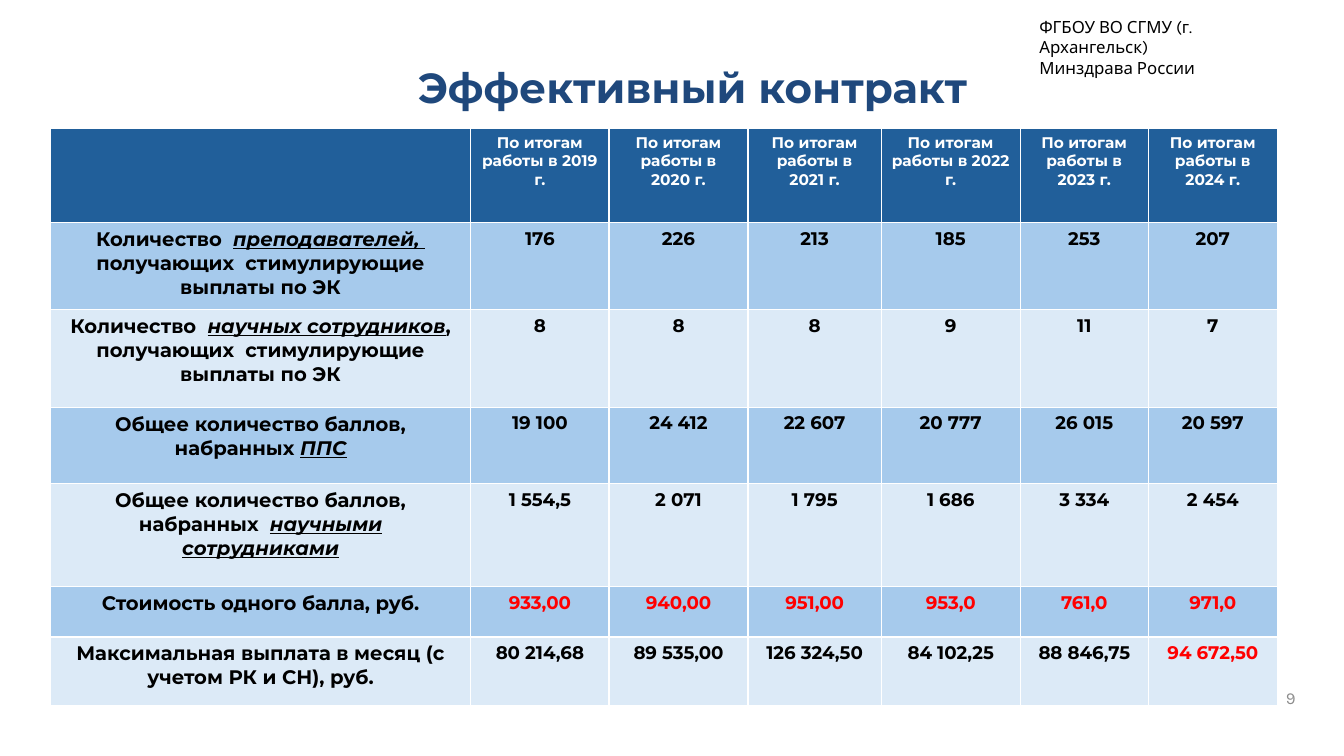
from pptx import Presentation
from pptx.dml.color import RGBColor
from pptx.enum import text
from pptx.util import Inches, Pt

HEADER_FILL, DARK_BAND, LIGHT_BAND = "215F9A", "A6CAEC", "DCEAF7"
BLACK, WHITE, RED, NAVY, GREY = "000000", "FFFFFF", "FF0000", "1F487C", "8C8C8C"
YEARS = range(2019, 2025)
COLUMN_WIDTHS = [4.17, 1.37, 1.38, 1.32, 1.38, 1.27, 1.28]
ROW_HEIGHTS = [0.94, 0.86, 0.97, 0.76, 1.02, 0.5, 0.68]

# Each row: label parts (every second one is emphasised), values, number of red values at the end
INDICATORS = [
    (["Количество  ", "преподавателей,  ", "получающих  стимулирующие выплаты по ЭК"],
     ["176", "226", "213", "185", "253", "207"], 0),
    (["Количество  ", "научных сотрудников", ", получающих  стимулирующие выплаты по ЭК"],
     ["8", "8", "8", "9", "11", "7"], 0),
    (["Общее количество баллов, набранных ", "ППС"],
     ["19 100", "24 412", "22 607", "20 777", "26 015", "20 597"], 0),
    (["Общее количество баллов, набранных  ", "научными сотрудниками"],
     ["1 554,5", "2 071", "1 795", "1 686", "3 334", "2 454"], 0),
    (["Стоимость одного балла, руб."],
     ["933,00", "940,00", "951,00", "953,0", "761,0", "971,0"], 6),
    (["Максимальная выплата в месяц (с учетом РК и СН), руб."],
     ["80 214,68", "89 535,00", "126 324,50", "84 102,25", "88 846,75", "94 672,50"], 1),
]


def color(value):
    return RGBColor.from_string(value)


def add_run(paragraph, words, size, hue, font="Montserrat", bold=True, emphasis=False):
    run = paragraph.add_run()
    run.text = words
    run.font.name, run.font.size, run.font.bold = font, Pt(size), bold
    run.font.italic = run.font.underline = emphasis
    run.font.color.rgb = color(hue)


def add_text_frame(slide, box, inset=True):
    frame = slide.shapes.add_textbox(*map(Inches, box)).text_frame
    frame.word_wrap = True
    if not inset:
        frame.margin_left = frame.margin_top = frame.margin_right = frame.margin_bottom = 0
    return frame


def add_organisation(slide, box):
    frame = add_text_frame(slide, box)
    add_run(frame.paragraphs[0], "ФГБОУ ВО СГМУ (г. Архангельск)", 12, BLACK, "Karla", False)
    add_run(frame.add_paragraph(), "Минздрава России", 12, BLACK, "Karla", False)


def add_title(slide, box):
    paragraph = add_text_frame(slide, box, inset=False).paragraphs[0]
    paragraph.alignment = text.PP_ALIGN.CENTER
    paragraph.line_spacing = 0.9
    add_run(paragraph, "Эффективный контракт", 30, NAVY)


def add_page_number(slide, box):
    paragraph = add_text_frame(slide, box, inset=False).paragraphs[0]
    paragraph.alignment = text.PP_ALIGN.RIGHT
    add_run(paragraph, "9", 12, GREY, "Karla", False)


def fill_cell(cell, fill, parts, size, hue):
    """Fill the cell and write its parts, emphasising every second one."""
    cell.fill.solid()
    cell.fill.fore_color.rgb = color(fill)
    paragraph = cell.text_frame.paragraphs[0]
    paragraph.alignment = text.PP_ALIGN.CENTER
    for index, part in enumerate(parts):
        add_run(paragraph, part, size, hue, emphasis=index % 2 == 1)


def add_indicator_table(slide, left, top):
    box = [left, top, sum(COLUMN_WIDTHS), sum(ROW_HEIGHTS)]
    table = slide.shapes.add_table(
        len(ROW_HEIGHTS), len(COLUMN_WIDTHS), *map(Inches, box)).table
    for column, width in zip(table.columns, COLUMN_WIDTHS):
        column.width = Inches(width)
    for row, height in zip(table.rows, ROW_HEIGHTS):
        row.height = Inches(height)

    fill_cell(table.cell(0, 0), HEADER_FILL, [], 11, WHITE)
    for column, year in enumerate(YEARS, 1):
        fill_cell(table.cell(0, column), HEADER_FILL,
                  [f"По итогам работы в {year} г."], 11, WHITE)

    for row, (label, values, red_count) in enumerate(INDICATORS, 1):
        band = DARK_BAND if row % 2 else LIGHT_BAND
        fill_cell(table.cell(row, 0), band, label, 14, BLACK)
        for column, value in enumerate(values, 1):
            hue = RED if column > len(values) - red_count else BLACK
            fill_cell(table.cell(row, column), band, [value], 13, hue)


def main():
    presentation = Presentation()
    presentation.slide_width, presentation.slide_height = Inches(13.33), Inches(7.5)
    slide = presentation.slides.add_slide(presentation.slide_layouts[6])
    add_organisation(slide, (10.21, 0.12, 2.82, 0.5))
    add_page_number(slide, (10.36, 6.82, 2.49, 0.4))
    add_title(slide, (0.41, 0.67, 12.92, 0.53))
    add_indicator_table(slide, 0.5, 1.27)
    presentation.save("out.pptx")


if __name__ == "__main__":
    main()
